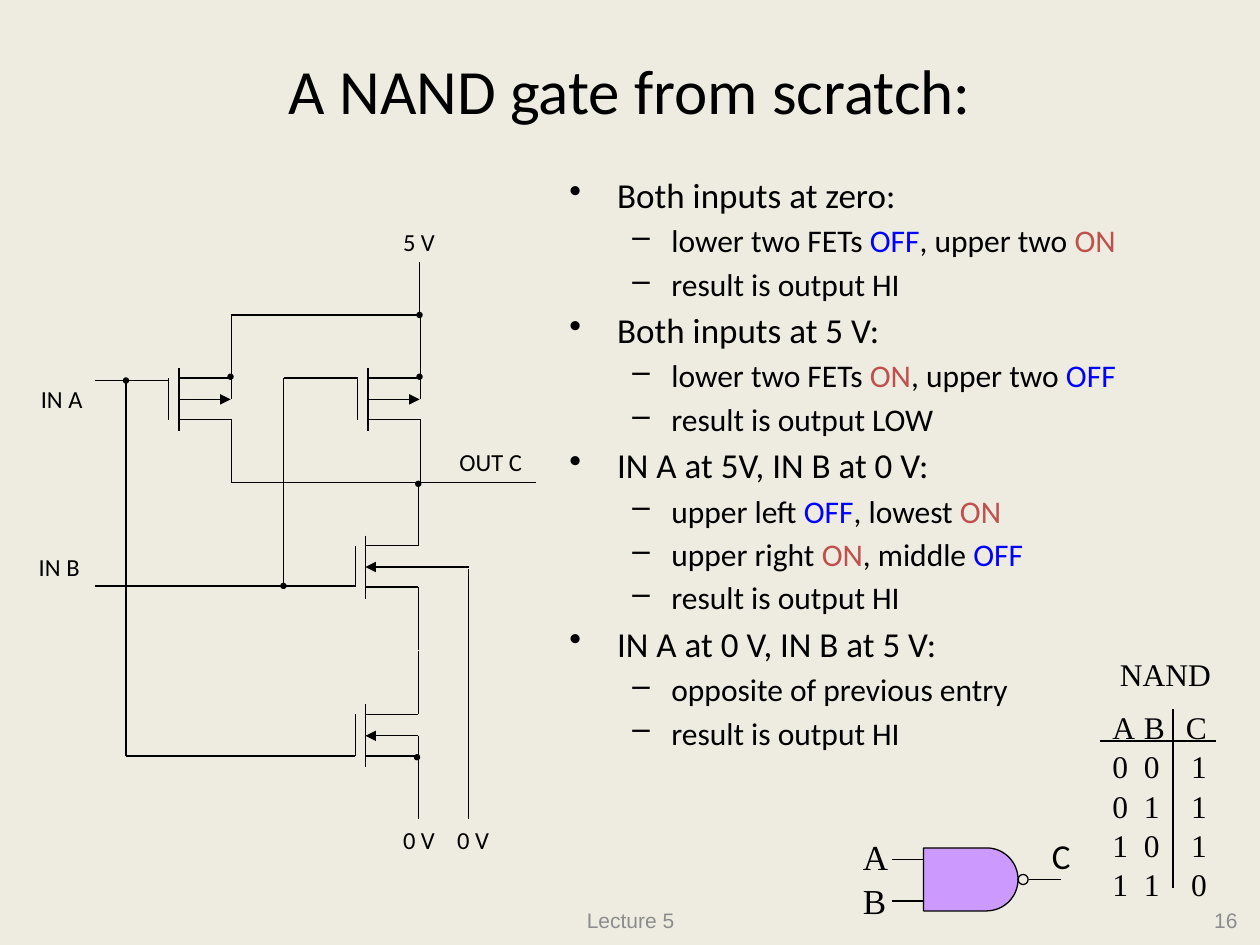
"""Build the slide that explains a NAND gate made of four FETs."""
from dataclasses import dataclass
from math import cos, pi, sin

from lxml import etree
from pptx import Presentation
from pptx.dml.color import RGBColor
from pptx.enum.shapes import MSO_CONNECTOR, MSO_SHAPE
from pptx.enum.text import MSO_ANCHOR, PP_ALIGN
from pptx.oxml.ns import qn
from pptx.util import Inches, Pt

STRAIGHT = MSO_CONNECTOR.STRAIGHT
OVAL = MSO_SHAPE.OVAL
TOP, MIDDLE = MSO_ANCHOR.TOP, MSO_ANCHOR.MIDDLE
LEFT, CENTER, RIGHT = PP_ALIGN.LEFT, PP_ALIGN.CENTER, PP_ALIGN.RIGHT
SANS, SERIF, FOOTER = "Calibri", "Times New Roman", "Arial"
BLACK, GREY, PURPLE, PAPER = "000000", "8C8C8C", "CC99FF", "EEECE1"
STATE_COLOURS = {"OFF": "0000FF", "ON": "C0504D"}
LINE_WIDTH = Pt(0.75)


@dataclass
class Label:
    """Text in a box, one paragraph per line."""
    lines: tuple[str, ...]
    left: float
    top: float
    width: float
    height: float
    size: float = 14
    font: str = SANS
    colour: str = BLACK
    align: PP_ALIGN = CENTER
    anchor: MSO_ANCHOR = TOP
    wrap: bool = False
    spacing: float = 1.0
    tabs: tuple[tuple[float, str], ...] = ()


@dataclass
class Fet:
    """Transistor placed by the upper end of its channel."""
    x: float
    y: float
    gate_from: float
    gate_drop: float
    arrow_from: float
    arrow_to: float
    tied_to: float | None = None


@dataclass
class Bullet:
    """Outline entry whose spans are parted by bars."""
    level: int
    text: str


@dataclass
class BulletStyle:
    """Look of one outline level."""
    mark: str
    size: float
    indent: float
    hanging: float
    before: float


LABELS = [
    Label(("Lecture 5",), 3.42, 7.1, 3.17, 0.4, 12, FOOTER, GREY, anchor=MIDDLE, wrap=True),
    Label(("16",), 7.59, 7.1, 2.33, 0.4, 12, FOOTER, GREY, RIGHT, MIDDLE, True),
    Label(("A NAND gate from scratch:",), 0.75, 0.08, 8.5, 1.25, 36, anchor=MIDDLE, wrap=True),
    Label(("5 V",), 3.08, 1.75, 0.49, 0.33),
    Label(("0 V",), 3.08, 6.5, 0.49, 0.33),
    Label(("0 V",), 3.51, 6.5, 0.49, 0.33),
    Label(("IN A",), 0.2, 3, 0.58, 0.33),
    Label(("IN B",), 0.18, 4.33, 0.58, 0.33),
    Label(("OUT C",), 3.49, 3.5, 0.81, 0.33),
    Label(("NAND",), 8.67, 5.15, 1.16, 0.5, 18, SERIF),
    Label(("A\tB\tC", "0\t0\t1", "0\t1\t1", "1\t0\t1", "1\t1\t0"), 8.73, 5.56, 0.97, 1.6,
          18, SERIF, align=LEFT, wrap=True, spacing=1.04, tabs=((0.25, "l"), (0.75, "r"))),
    Label(("A", "B"), 6.75, 6.57, 0.4, 0.77, 20, SERIF, align=LEFT, spacing=1.04),
    Label(("C",), 8.25, 6.57, 0.4, 0.43, 20, align=LEFT),
]
FETS = [
    Fet(1.42, 3, 0.75, 0.02, 1.42, 1.83, 3),
    Fet(2.92, 3, 2.25, 0, 2.92, 3.33, 3),
    Fet(2.9, 4.33, 2.23, 0.32, 3.72, 2.9),
    Fet(2.9, 5.67, 2.23, 0.33, 3.32, 2.9, 6),
]
WIRES = [
    (3.33, 2.08, 3.33, 2.5), (1.83, 2.5, 3.33, 2.5), (1, 3, 1, 6), (1, 6, 2.25, 6),
    (2.25, 3, 2.25, 4.67), (0.75, 4.65, 2.25, 4.65), (1.83, 3.83, 4.25, 3.83),
    (3.72, 4.52, 3.72, 6.5),
]
TABLE_RULES = [(8.73, 5.88, 9.65, 5.88), (9.31, 5.63, 9.31, 7.05)]
GATE_PINS = [(7.08, 6.82, 7.33, 6.82), (7.08, 7.15, 7.33, 7.15), (8.17, 6.98, 8.42, 6.98)]
JUNCTIONS = [
    (3.31, 6.01), (3.33, 2.99), (1.83, 2.99), (1, 3.02), (3.32, 3.84), (2.25, 4.65), (3.33, 2.5),
]
STYLES = [BulletStyle("•", 20, 0.38, 0.38, 3.6), BulletStyle("–", 18, 0.81, 0.31, 3.2)]
BULLETS = [
    Bullet(0, "Both inputs at zero:"),
    Bullet(1, "lower two FETs |OFF|, upper two |ON"),
    Bullet(1, "result is output HI"),
    Bullet(0, "Both inputs at 5 V:"),
    Bullet(1, "lower two FETs |ON|, upper two |OFF"),
    Bullet(1, "result is output LOW"),
    Bullet(0, "IN A at 5V, IN B at 0 V:"),
    Bullet(1, "upper left |OFF|, lowest |ON"),
    Bullet(1, "upper right |ON|, middle |OFF"),
    Bullet(1, "result is output HI"),
    Bullet(0, "IN A at 0 V, IN B at 5 V:"),
    Bullet(1, "opposite of previous entry"),
    Bullet(1, "result is output HI"),
]


def rgb(colour: str) -> RGBColor:
    """Turn a hex string into a colour."""
    return RGBColor.from_string(colour)


def set_font(font, name: str, size: float, colour: str) -> None:
    """Set the typeface, size and colour of a font."""
    font.name, font.size = name, Pt(size)
    font.color.rgb = rgb(colour)


def add_line(page, x1: float, y1: float, x2: float, y2: float, arrow: bool = False) -> None:
    """Draw a thin black line, with an arrowhead at its end if asked."""
    line = page.shapes.add_connector(STRAIGHT, Inches(x1), Inches(y1), Inches(x2), Inches(y2))
    line.line.color.rgb = rgb(BLACK)
    line.line.width = LINE_WIDTH
    properties = line._element.spPr
    if arrow:
        etree.SubElement(properties.find(qn("a:ln")), qn("a:tailEnd"), type="triangle")
    etree.SubElement(properties, qn("a:effectLst"))


def paint(shape, fill: str | None) -> None:
    """Give a shape a thin black outline and a fill, or none."""
    shape.shadow.inherit = False
    shape.line.color.rgb = rgb(BLACK)
    shape.line.width = LINE_WIDTH
    if fill is None:
        shape.fill.background()
    else:
        shape.fill.solid()
        shape.fill.fore_color.rgb = rgb(fill)


def add_circle(page, x: float, y: float, size: float, fill: str | None) -> None:
    """Draw a circle around a centre."""
    paint(page.shapes.add_shape(OVAL, Inches(x - size / 2), Inches(y - size / 2),
                                Inches(size), Inches(size)), fill)


def add_fet(page, fet: Fet) -> None:
    """Draw a transistor with its gate wire and leads."""
    x, y = fet.x, fet.y
    gate, lead, low = x - 0.08, x + 0.42, y + 0.33
    add_line(page, fet.gate_from, y + fet.gate_drop, gate, y + fet.gate_drop)
    add_line(page, gate, y, gate, low)
    add_line(page, x, y - 0.08, x, y + 0.42)
    for level, end in ((y, y - 0.5), (low, low + 0.5)):
        add_line(page, x, level, lead, level)
        add_line(page, lead, level, lead, end)
    middle = y + 0.17
    add_line(page, fet.arrow_from, middle, fet.arrow_to, middle, arrow=True)
    if fet.tied_to is not None:
        add_line(page, lead, middle, lead, fet.tied_to)


def add_gate_body(page, left: float, top: float, radius: float) -> None:
    """Draw a square that ends in a half circle."""
    steps = 32
    x, y = left + 2 * radius, top + radius
    angles = [pi * step / steps - pi / 2 for step in range(steps + 1)]
    arc = [(Inches(x + radius * cos(a)), Inches(y + radius * sin(a))) for a in angles]
    builder = page.shapes.build_freeform(Inches(left), Inches(top))
    builder.add_line_segments(arc + [(Inches(left), Inches(top + 2 * radius))], close=True)
    paint(builder.convert_to_shape(), PURPLE)


def add_label(page, label: Label) -> None:
    """Place a text box with evenly set paragraphs."""
    frame = page.shapes.add_textbox(Inches(label.left), Inches(label.top),
                                    Inches(label.width), Inches(label.height)).text_frame
    frame.word_wrap, frame.vertical_anchor = label.wrap, label.anchor
    for index, line in enumerate(label.lines):
        para = frame.add_paragraph() if index else frame.paragraphs[0]
        para.text = line
        if label.tabs:
            stops = etree.SubElement(para._p.get_or_add_pPr(), qn("a:tabLst"))
            for place, side in label.tabs:
                etree.SubElement(stops, qn("a:tab"), pos=str(Inches(place)), algn=side)
        para.alignment, para.line_spacing = label.align, label.spacing
        set_font(para.font, label.font, label.size, label.colour)


def add_outline(page) -> None:
    """Write the two-level list of input cases."""
    frame = page.shapes.add_textbox(Inches(4.42), Inches(1.33), Inches(5.42), Inches(5.5)).text_frame
    frame.word_wrap = True
    for index, bullet in enumerate(BULLETS):
        style = STYLES[bullet.level]
        para = frame.add_paragraph() if index else frame.paragraphs[0]
        para.level = bullet.level
        properties = para._p.get_or_add_pPr()
        properties.set("marL", str(Inches(style.indent)))
        properties.set("indent", str(-Inches(style.hanging)))
        etree.SubElement(properties, qn("a:buChar"), char=style.mark)
        para.space_before = Pt(style.before)
        set_font(para.font, SANS, style.size, BLACK)
        for text in bullet.text.split("|"):
            span = para.add_run()
            span.text = text
            if text in STATE_COLOURS:
                span.font.color.rgb = rgb(STATE_COLOURS[text])


def main() -> None:
    """Build and save the deck."""
    deck = Presentation()
    deck.slide_width, deck.slide_height = Inches(10), Inches(7.5)
    page = deck.slides.add_slide(deck.slide_layouts[6])
    page.background.fill.solid()
    page.background.fill.fore_color.rgb = rgb(PAPER)
    for fet in FETS:
        add_fet(page, fet)
    for ends in WIRES + TABLE_RULES + GATE_PINS:
        add_line(page, *ends)
    for x, y in JUNCTIONS:
        add_circle(page, x, y, 0.04, BLACK)
    add_gate_body(page, 7.33, 6.73, 0.25)
    add_circle(page, 8.12, 6.98, 0.08, None)
    for label in LABELS:
        add_label(page, label)
    add_outline(page)
    deck.save("out.pptx")


if __name__ == "__main__":
    main()
